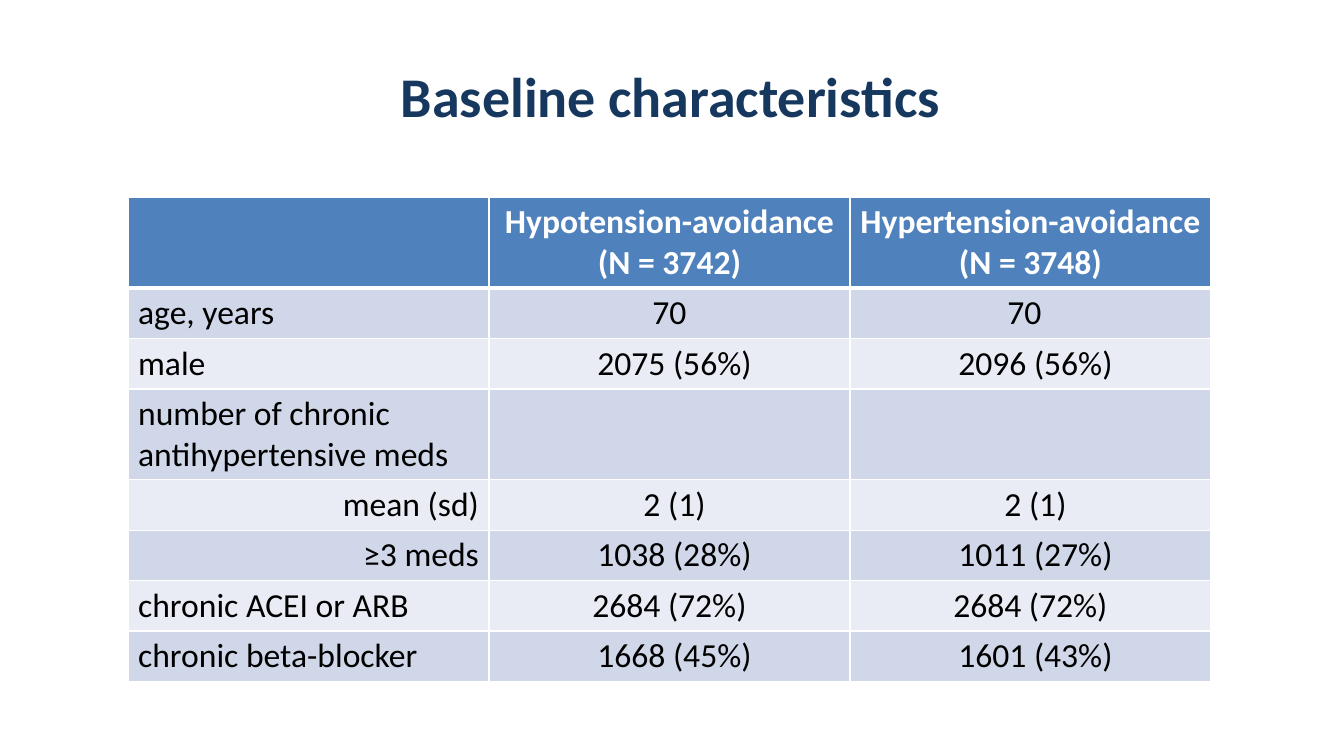
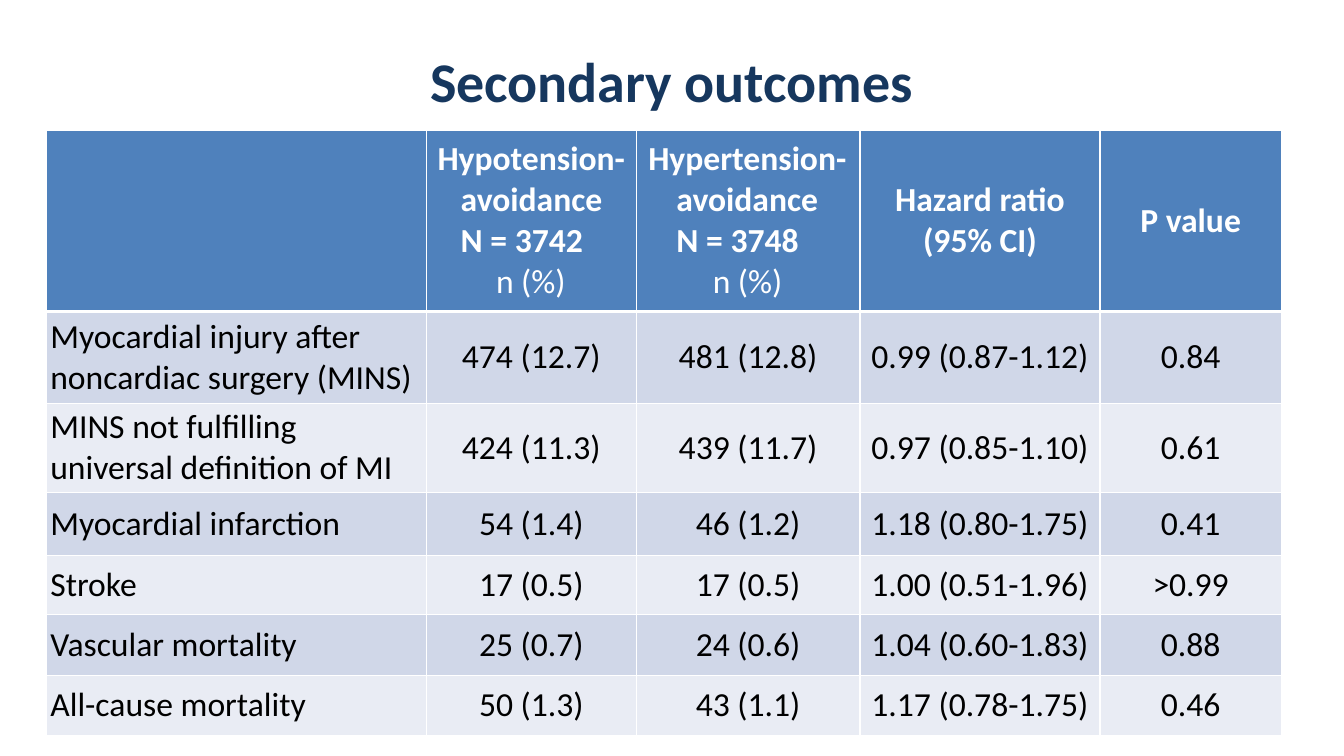
"""Build two slides of trial results, each a title above a banded table."""
from lxml import etree
from pptx import Presentation
from pptx.dml.color import RGBColor
from pptx.enum import text
from pptx.oxml import ns
from pptx.util import Inches, Pt

NAVY = RGBColor(0x16, 0x37, 0x5E)
BLUE = RGBColor(0x4F, 0x81, 0xBC)
BANDS = (RGBColor(0xD0, 0xD7, 0xE8), RGBColor(0xE9, 0xEC, 0xF4))
WHITE = RGBColor(0xFF, 0xFF, 0xFF)
BLACK = RGBColor(0, 0, 0)
FONT = "Calibri"
LEFT, CENTER, RIGHT = text.PP_ALIGN.LEFT, text.PP_ALIGN.CENTER, text.PP_ALIGN.RIGHT

BASELINE_HEADINGS = (
    "", "Hypotension-avoidance\v(N = 3742)", "Hypertension-avoidance\v(N = 3748)")
BASELINE_ROWS = (
    ("age, years", "70", "70"),
    ("male", "2075 (56%)", "2096 (56%)"),
    ("number of chronic antihypertensive meds", "", ""),
    ("mean (sd)", "2 (1)", "2 (1)"),
    ("≥3 meds", "1038 (28%)", "1011 (27%)"),
    ("chronic ACEI or ARB", "2684 (72%)", "2684 (72%)"),
    ("chronic beta-blocker", "1668 (45%)", "1601 (43%)"),
)
SUBROWS = ("mean (sd)", "≥3 meds")
UNSHIFTED = ("age, years", "chronic ACEI or ARB")

OUTCOME_HEADINGS = ("", "", "", "Hazard ratio\v(95% CI)", "P value")
OUTCOME_ARMS = (
    ("Hypotension-\vavoidance\vN = 3742", 0.34, -0.23, 0.69),
    ("Hypertension-\vavoidance\vN = 3748", 0.40, -0.28, 0.76),
)
OUTCOME_ROWS = (
    ("Myocardial injury after\vnoncardiac surgery (MINS)",
     "474 (12.7)", "481 (12.8)", "0.99 (0.87-1.12)", "0.84"),
    ("MINS not fulfilling\vuniversal definition of MI",
     "424 (11.3)", "439 (11.7)", "0.97 (0.85-1.10)", "0.61"),
    ("Myocardial infarction", "54 (1.4)", "46 (1.2)", "1.18 (0.80-1.75)", "0.41"),
    ("Stroke", "17 (0.5)", "17 (0.5)", "1.00 (0.51-1.96)", ">0.99"),
    ("Vascular mortality", "25 (0.7)", "24 (0.6)", "1.04 (0.60-1.83)", "0.88"),
    ("All-cause mortality", "50 (1.3)", "43 (1.1)", "1.17 (0.78-1.75)", "0.46"),
)


def style(paragraph, size, color, bold=False, align=LEFT):
    paragraph.alignment = align
    font = paragraph.font
    font.name, font.size, font.bold = FONT, Pt(size), bold
    font.color.rgb = color


def indent(paragraph, left, first=0):
    properties = paragraph._p.get_or_add_pPr()
    properties.set("marL", str(Inches(left)))
    properties.set("indent", str(Inches(first)))


def add_title(slide, wording, left, top, width):
    title = slide.shapes.add_textbox(
        Inches(left), Inches(top), Inches(width), Inches(0.69))
    frame = title.text_frame
    frame.margin_left = frame.margin_right = frame.margin_bottom = 0
    frame.margin_top = Inches(0.01)
    heading = frame.paragraphs[0]
    heading.text = wording
    heading.space_before = Pt(0.9)
    style(heading, 40, NAVY, True, CENTER)


def add_border(cell, side, width):
    line = etree.SubElement(
        cell._tc.get_or_add_tcPr(), ns.qn(f"a:ln{side}"), w=str(Pt(width)))
    fill = etree.SubElement(line, ns.qn("a:solidFill"))
    etree.SubElement(fill, ns.qn("a:srgbClr"), val=str(WHITE))


def add_grid(slide, left, top, widths, heights):
    grid = slide.shapes.add_table(
        len(heights), len(widths), Inches(left), Inches(top),
        Inches(sum(widths)), Inches(sum(heights))).table
    grid.horz_banding = False
    for column, width in zip(grid.columns, widths):
        column.width = Inches(width)
    for index, (row, height) in enumerate(zip(grid.rows, heights)):
        row.height = Inches(height)
        for cell in row.cells:
            for side in "LRTB":
                thick = (index, side) in ((0, "B"), (1, "T"))
                add_border(cell, side, 3 if thick else 1)
            cell.fill.solid()
            cell.fill.fore_color.rgb = BANDS[(index - 1) % 2] if index else BLUE
            cell.vertical_anchor = text.MSO_ANCHOR.MIDDLE
            cell.margin_left = cell.margin_right = 0
            cell.margin_top = cell.margin_bottom = 0
    return grid


def write(cell, wording, color=BLACK, bold=False, align=CENTER, left=0, right=0):
    cell.margin_left, cell.margin_right = Inches(left), Inches(right)
    entry = cell.text_frame.paragraphs[0]
    entry.text = wording
    style(entry, 24, color, bold, align)


def write_headings(grid, headings):
    for column, heading in enumerate(headings):
        write(grid.cell(0, column), heading, WHITE, True)


def write_arm(cell, wording, left, first, unit_left):
    write(cell, wording, WHITE, True, LEFT)
    indent(cell.text_frame.paragraphs[0], left, first)
    unit = cell.text_frame.add_paragraph()
    unit.text = "n (%)"
    style(unit, 24, WHITE)
    indent(unit, unit_left)


def build_baseline(slide):
    add_title(slide, "Baseline characteristics", 3.96, 0.6, 5.38)
    grid = add_grid(slide, 1.27, 1.96, [3.58] * 3,
                    [0.9, 0.5, 0.5, 0.9] + [0.5] * 4)
    write_headings(grid, BASELINE_HEADINGS)
    for row, (label, *values) in enumerate(BASELINE_ROWS, 1):
        align = RIGHT if label in SUBROWS else LEFT
        write(grid.cell(row, 0), label, align=align, left=0.1, right=0.1)
        shift = 0 if label in UNSHIFTED else 0.1
        for column, value in enumerate(values, 1):
            write(grid.cell(row, column), value, left=shift)
    grid.cell(1, 2).margin_right = Inches(0.12)


def build_outcomes(slide):
    add_title(slide, "Secondary outcomes", 4.25, 0.45, 4.82)
    grid = add_grid(slide, 0.46, 1.29, [3.77, 2.08, 2.22, 2.38, 1.8],
                    [1.8, 0.91, 0.89, 0.62, 0.59, 0.6, 0.6])
    write_headings(grid, OUTCOME_HEADINGS)
    for column, arm in enumerate(OUTCOME_ARMS, 1):
        write_arm(grid.cell(0, column), *arm)
    for row, (label, *values) in enumerate(OUTCOME_ROWS, 1):
        write(grid.cell(row, 0), label, align=LEFT, left=0.04)
        for column, value in enumerate(values, 1):
            write(grid.cell(row, column), value)


def main():
    deck = Presentation()
    deck.slide_width, deck.slide_height = Inches(13.33), Inches(7.5)
    for build in (build_baseline, build_outcomes):
        build(deck.slides.add_slide(deck.slide_layouts[6]))
    deck.save("out.pptx")


if __name__ == "__main__":
    main()
